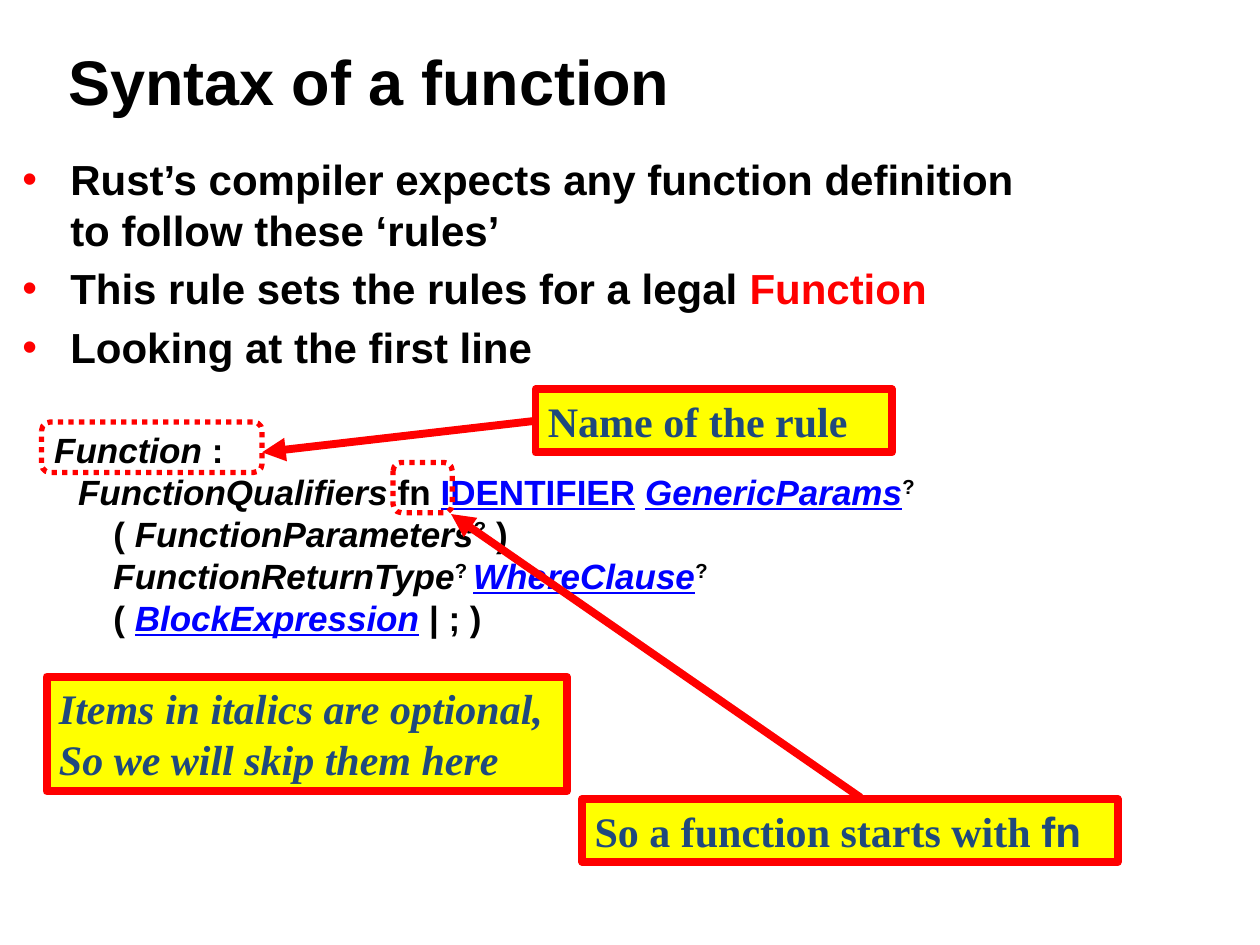
from lxml.etree import SubElement
from pptx import Presentation
from pptx.dml.color import RGBColor
from pptx.enum.dml import MSO_LINE
from pptx.enum.shapes import MSO_CONNECTOR as CONN, MSO_SHAPE as SHAPE
from pptx.enum.text import MSO_ANCHOR as ANCHOR, MSO_AUTO_SIZE as AUTO, PP_ALIGN as ALIGN
from pptx.oxml.ns import qn
from pptx.util import Inches, Pt

BLACK, RED, YELLOW, NAVY, BLUE = "000000", "FF0000", "FFFF00", "1F497D", "0000FF"
ITALIC = {"italic": True}
SUPER = {"raised": True}
LINK = {"color": BLUE, "underline": True}
ITALIC_LINK = {**LINK, **ITALIC}

BULLETS = [
    [("Rust’s compiler expects any function definition\nto follow these ‘rules’", {})],
    [("This rule sets the rules for a legal ", {}), ("Function", {"color": RED})],
    [("Looking at the first line", {})],
]
GRAMMAR = [
    (0, [("Function", ITALIC), (" :", {})]),
    (0.19, [("FunctionQualifiers ", ITALIC), ("fn ", {}), ("IDENTIFIER", LINK), (" ", {}),
            ("GenericParams", ITALIC_LINK), ("?", SUPER)]),
    (0.47, [("( ", {}), ("FunctionParameters", ITALIC), ("?", SUPER), (" )", {})]),
    (0.47, [("FunctionReturnType", ITALIC), ("? ", SUPER),
            ("WhereClause", ITALIC_LINK), ("?", SUPER)]),
    (0.47, [("( ", {}), ("BlockExpression", ITALIC_LINK), (" | ; )", {})]),
]


def rgb(color):
    """Turn a hex string into a colour."""
    return RGBColor.from_string(color)


def add_text(p, text, size=24, font="Arial", color=BLACK, italic=False,
             underline=False, raised=False):
    """Add bold text to a paragraph, with a line break at each newline."""
    for i, line in enumerate(text.split("\n")):
        if i:
            p.add_line_break()
        r = p.add_run()
        r.text = line
        f = r.font
        f.size, f.name, f.bold, f.italic, f.underline = Pt(size), font, True, italic, underline
        f.color.rgb = rgb(color)
        if raised:
            r._r.get_or_add_rPr().set("baseline", "30000")


def add_paragraph(tf, runs, indent=0, hanging=0, before=0, bullet=None, **fmt):
    """Append a left-aligned paragraph of formatted runs, with an optional bullet."""
    p = tf.paragraphs[0]
    if p.runs:
        p = tf.add_paragraph()
    p.alignment, p.space_before = ALIGN.LEFT, Pt(before)
    pPr = p._p.get_or_add_pPr()
    pPr.set("marL", str(Inches(indent)))
    pPr.set("indent", str(-Inches(hanging)))
    if bullet:
        SubElement(SubElement(pPr, qn("a:buClr")), qn("a:srgbClr")).set("val", RED)
        SubElement(pPr, qn("a:buFont")).set("typeface", "Arial")
        SubElement(pPr, qn("a:buChar")).set("char", bullet)
    else:
        SubElement(pPr, qn("a:buNone"))
    for text, own in runs:
        add_text(p, text, **{**fmt, **own})


def set_frame(sp, anchor=ANCHOR.TOP):
    """Make a shape's text wrap at a fixed size and return its frame."""
    tf = sp.text_frame
    tf.word_wrap, tf.auto_size, tf.vertical_anchor = True, AUTO.NONE, anchor
    return tf


def place(sp, x, y, w, h):
    """Move and size a placeholder in inches."""
    sp.left, sp.top, sp.width, sp.height = map(Inches, (x, y, w, h))


def add_box(s, kind, x, y, w, h, width):
    """Add a red outlined shape without a shadow."""
    sp = s.shapes.add_shape(kind, *map(Inches, (x, y, w, h)))
    sp.shadow.inherit = False
    sp.line.color.rgb, sp.line.width = rgb(RED), Pt(width)
    return sp


def add_callout(s, x, y, w, h, lines, **fmt):
    """Add a yellow note with one paragraph per line."""
    sp = add_box(s, SHAPE.RECTANGLE, x, y, w, h, 4.5)
    sp.fill.solid()
    sp.fill.fore_color.rgb = rgb(YELLOW)
    tf = set_frame(sp)
    for runs in lines:
        add_paragraph(tf, runs, font="Times New Roman", color=NAVY, **fmt)
    return sp


def add_marker(s, x, y, w, h):
    """Add a dotted frame around a part of the grammar."""
    sp = add_box(s, SHAPE.ROUNDED_RECTANGLE, x, y, w, h, 3)
    sp.fill.background()
    sp.line.dash_style = MSO_LINE.ROUND_DOT


def add_arrow(s, x1, y1, x2, y2):
    """Add a red arrow that points at its end."""
    c = s.shapes.add_connector(CONN.STRAIGHT, *map(Inches, (x1, y1, x2, y2)))
    c.line.color.rgb, c.line.width = rgb(RED), Pt(4.5)
    SubElement(c.line._get_or_add_ln(), qn("a:tailEnd")).set("type", "triangle")
    SubElement(c._element.spPr, qn("a:effectLst"))
    return c


def main():
    """Build the slide and save it."""
    prs = Presentation()
    prs.slide_width, prs.slide_height = Inches(10), Inches(7.5)
    s = prs.slides.add_slide(prs.slide_layouts[1])
    title, body = s.placeholders

    place(title, 0.44, 0.12, 8.99, 1.03)
    add_paragraph(set_frame(title, ANCHOR.MIDDLE), [("Syntax of a function", {})], size=36)

    place(body, 0.33, 3.35, 9.07, 1.92)
    tf = set_frame(body)
    for indent, runs in GRAMMAR:
        add_paragraph(tf, runs, indent=indent, size=20)

    name = add_callout(s, 4.25, 3.09, 2.83, 0.5, [[("Name of the rule", {})]])

    tf = set_frame(s.shapes.add_textbox(*map(Inches, (0.08, 1.17, 9.07, 1.92))))
    for runs in BULLETS:
        add_paragraph(tf, runs, indent=0.38, hanging=0.38, before=4.8, bullet="•")

    add_marker(s, 0.33, 3.35, 1.75, 0.4)
    add_arrow(s, 4.25, 3.34, 2.08, 3.59).begin_connect(name, 1)
    add_callout(s, 0.37, 5.37, 4.13, 0.91,
                [[("Items in italics are optional,", {})], [("So we will skip them here", {})]],
                italic=True)
    add_callout(s, 4.62, 6.34, 4.25, 0.5,
                [[("So a function starts with ", {}), ("fn", {"font": "Arial"})]])
    add_marker(s, 3.12, 3.67, 0.47, 0.4)
    add_arrow(s, 6.83, 6.33, 3.58, 4.08)
    prs.save("out.pptx")


if __name__ == "__main__":
    main()
